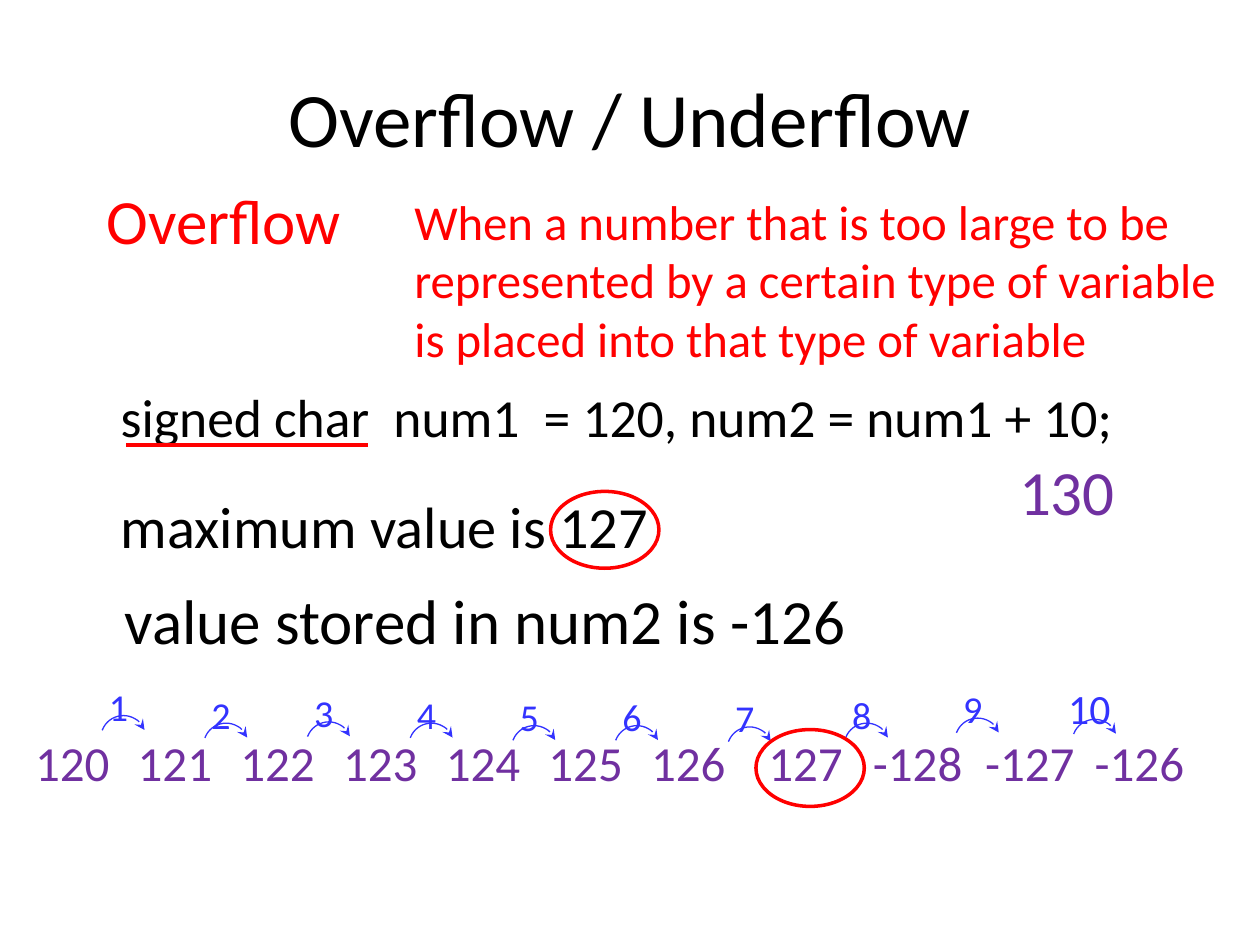
from lxml.etree import SubElement
from pptx import Presentation
from pptx.dml.color import RGBColor
from pptx.enum.shapes import MSO_CONNECTOR, MSO_SHAPE
from pptx.enum.text import MSO_ANCHOR, PP_ALIGN
from pptx.oxml.ns import qn
from pptx.util import Inches, Pt

BLACK = RGBColor(0x00, 0x00, 0x00)
RED = RGBColor(0xFF, 0x00, 0x00)
PURPLE = RGBColor(0x70, 0x30, 0xA0)
BLUE = RGBColor(0x33, 0x33, 0xFF)

deck = Presentation()
deck.slide_width, deck.slide_height = Inches(10), Inches(7.5)
COL = deck.slide_width / 100
ROW = deck.slide_height / 75
page = deck.slides.add_slide(deck.slide_layouts[5])


def place(left, top, width, height):
    """Turn grid columns and rows into slide lengths."""
    return round(left * COL), round(top * ROW), round(width * COL), round(height * ROW)


def write(box, text, size, color):
    box.text_frame.word_wrap = True
    para = box.text_frame.paragraphs[0]
    span = para.add_run()
    span.text = text
    span.font.name = "Calibri"
    span.font.size = Pt(size)
    span.font.color.rgb = color
    return para


# Title
title = page.shapes.title
title.left, title.top, title.width, title.height = place(5, 3, 90, 12.5)
title.text_frame.vertical_anchor = MSO_ANCHOR.MIDDLE
write(title, "Overflow / Underflow", 44, BLACK).alignment = PP_ALIGN.CENTER

# Definition and worked example
statements = [
    ("signed char  num1  = 120, num2 = num1 + 10;", 30.6, BLACK, (8.6, 30, 85, 9.4)),
    ("Overflow", 36, RED, (7.5, 13.9, 21.7, 6.9)),
    ("maximum value is 127", 33.3, BLACK, (8.6, 38.4, 46.3, 8.3)),
    ("130", 36, PURPLE, (79.9, 35.4, 10, 6.9)),
    ("When a number that is too large to be represented by a certain type of "
     "variable is placed into that type of variable", 27.9, RED, (31.9, 14.7, 67.9, 12.5)),
    ("value stored in num2 is -126", 36, BLACK, (8.9, 45.7, 64.9, 8.3)),
]
for text, size, color, area in statements:
    write(page.shapes.add_textbox(*place(*area)), text, size, color)

left, top, right, bottom = place(10, 35.3, 29.2, 35.3)
underline = page.shapes.add_connector(MSO_CONNECTOR.STRAIGHT, left, top, right, bottom)
underline.line.color.rgb = RED
underline.line.width = Pt(2)
SubElement(underline._element.spPr, qn("a:effectLst"))

# Counting row: evenly spaced up to 126, wider around the wrap
PITCH = 8.15
values = [*range(120, 128), -128, -127, -126]
value_lefts = [1.8 + PITCH * i for i in range(7)] + [60, 68.3, 77.2, 85.9]
for value, left in zip(values, value_lefts):
    width = 12.5 if value == -128 else 10
    box = page.shapes.add_textbox(*place(left, 57.65, width, 6.9))
    write(box, str(value), 28, PURPLE)

# Numbered hops between the values
hop_lefts = [8 + PITCH * i for i in range(6)] + [57.7, 67, 75.8, 85.1]
hop_tops = [56.8, 57.4, 57.3, 57.4, 57.6, 57.6, 57.7, 57.4, 57, 57.1]
for step, (left, top) in enumerate(zip(hop_lefts, hop_tops), start=1):
    hop = page.shapes.add_shape(MSO_SHAPE.ARC, *place(left, top, 3.6, 3.6))
    hop.adjustments[0], hop.adjustments[1] = 120.38, 203.16
    hop.shadow.inherit = False
    hop.fill.background()
    hop.line.color.rgb = BLUE
    hop.line.width = Pt(0.75)
    SubElement(hop.line._get_or_add_ln(), qn("a:tailEnd"), type="stealth")

    if step < 10:
        size, area = 21.7, (left - 0.35, top - 3.05, 4.2, 4.2)
    else:
        size, area = 23.8, (left - 1.3, top - 3.4, 5.6, 4.5)
    write(page.shapes.add_textbox(*place(*area)), str(step), size, BLUE)

# Rings around both appearances of the maximum
for left, top in [(43.7, 39), (60, 57.9)]:
    ring = page.shapes.add_shape(MSO_SHAPE.OVAL, *place(left, top, 8.6, 6.1))
    ring.shadow.inherit = False
    ring.fill.background()
    ring.line.color.rgb = RED
    ring.line.width = Pt(2)

deck.save("out.pptx")
